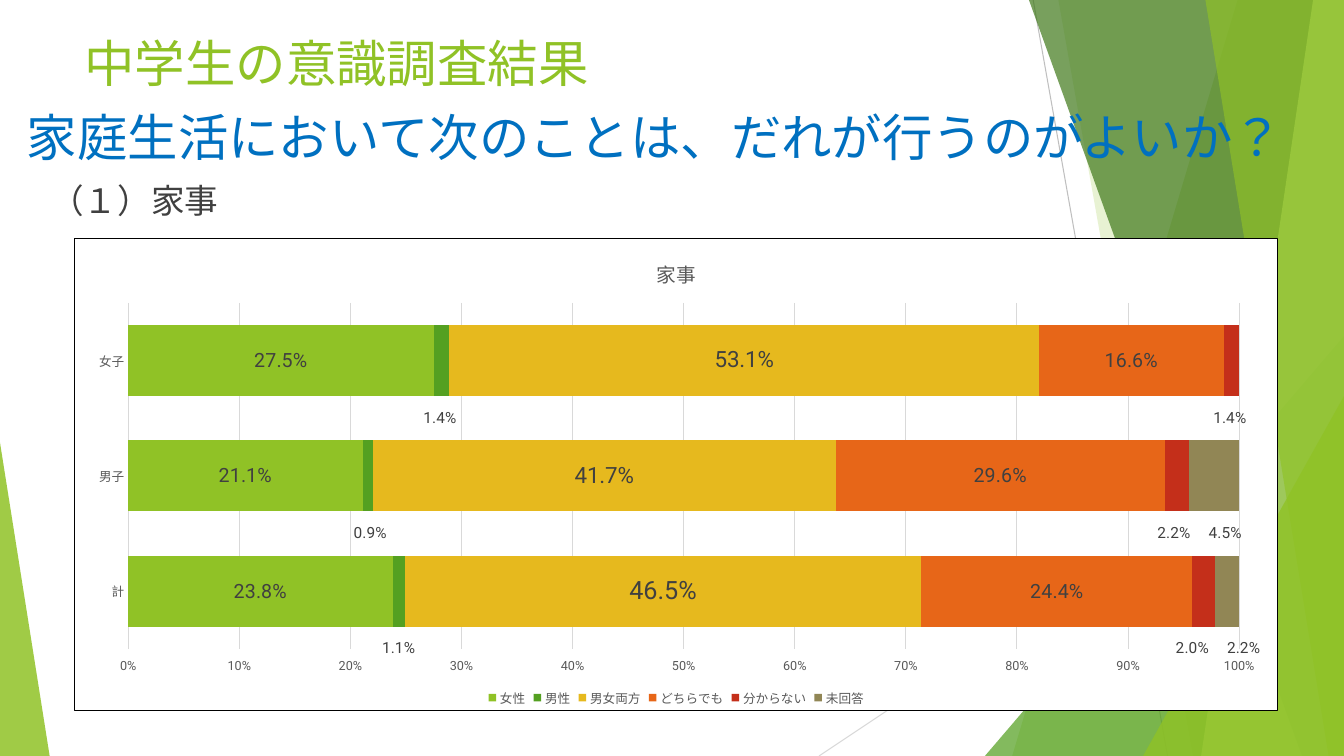
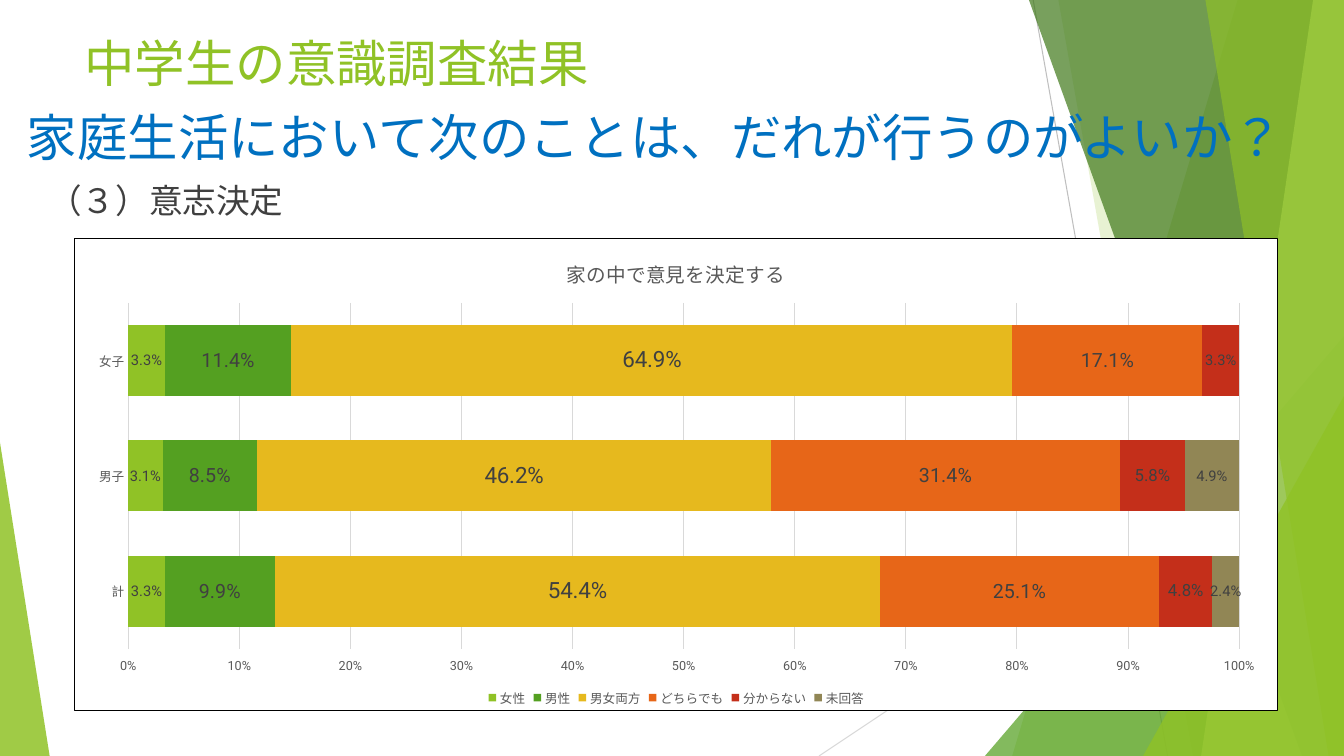
"""Build two slides of survey results on who should do what at home."""
from dataclasses import dataclass

from lxml.etree import SubElement
from pptx import Presentation
from pptx.chart.data import CategoryChartData
from pptx.dml.color import RGBColor
from pptx.enum.chart import (XL_CHART_TYPE, XL_LABEL_POSITION, XL_LEGEND_POSITION,
                             XL_TICK_LABEL_POSITION, XL_TICK_MARK)
from pptx.enum.lang import MSO_LANGUAGE_ID
from pptx.enum.shapes import MSO_CONNECTOR, MSO_SHAPE
from pptx.enum.text import MSO_ANCHOR
from pptx.oxml import parse_xml
from pptx.oxml.ns import nsdecls, qn
from pptx.util import Pt


@dataclass(frozen=True)
class Theme:
    font: str = "Roboto"
    lime: str = "90C226"
    green: str = "54A021"
    forest: str = "3F7819"
    pale: str = "C0E474"
    blue: str = "0070C0"
    ink: str = "404040"
    axis_ink: str = "595959"
    grid: str = "D9D9D9"
    grey: str = "BFBFBF"
    series: tuple = ("90C226", "54A021", "E6B91E", "E76618", "C42F1A", "918655")
    heading: int = 36
    subheading: int = 24
    chart_title: int = 14
    axis: int = 9


THEME = Theme()
WIDTH, HEIGHT = 960, 540
CHART_WIDTH, CHART_HEIGHT = 860, 338


def style(font, size, colour):
    font.name = THEME.font
    font.size = Pt(size)
    font.color.rgb = RGBColor.from_string(colour)


def set_layout(parent, position, x, y, w=None, h=None, **modes):
    layout = parent.find(qn("c:layout"))
    if layout is None:
        layout = parse_xml(f"<c:layout {nsdecls('c')}/>")
        parent.insert(position, layout)
    manual = SubElement(layout, qn("c:manualLayout"))
    for name, value in modes.items():
        SubElement(manual, qn(f"c:{name}"), val=value)
    for name, length, whole in (("x", x, CHART_WIDTH), ("y", y, CHART_HEIGHT),
                                ("w", w, CHART_WIDTH), ("h", h, CHART_HEIGHT)):
        if length is not None:
            SubElement(manual, qn(f"c:{name}"), val=str(length / whole))


deck = Presentation()
deck.slide_width, deck.slide_height = Pt(WIDTH), Pt(HEIGHT)
blank = deck.slide_layouts[6]
for placeholder in list(blank.placeholders):
    blank.shapes.element.remove(placeholder.element)
pages = [deck.slides.add_slide(blank) for _ in range(2)]

DECOR_LINES = [
    (738, 0, 834, HEIGHT, THEME.grey),
    (WIDTH, 290, 585, HEIGHT, THEME.grid),
]
DECOR_SHAPES = [
    ("band", (884, 723), THEME.lime, 30),
    ("band", (756, 852), THEME.lime, 20),
    ("peak", (703.5, WIDTH, 240, 1), THEME.green, 72),
    ("band", (735, 930), THEME.forest, 70),
    ("band", (938, 858), THEME.pale, 70),
    ("band", (861, 949), THEME.lime, 65),
    ("peak", (816.5, WIDTH, 283, 1), THEME.lime, 80),
    ("peak", (0, 35.5, 316, 0), THEME.lime, 85),
]

canvas = pages[0].shapes
for x1, y1, x2, y2, colour in DECOR_LINES:
    line = canvas.add_connector(MSO_CONNECTOR.STRAIGHT, Pt(x1), Pt(y1), Pt(x2), Pt(y2))
    line.line.color.rgb = RGBColor.from_string(colour)
    line.line.width = Pt(0.75)
    SubElement(line.element.spPr, qn("a:effectLst"))

for kind, geometry, colour, opacity in DECOR_SHAPES:
    if kind == "band":
        top_x, bottom_x = geometry
        builder = canvas.build_freeform(Pt(top_x), 0)
        builder.add_line_segments([(Pt(WIDTH), 0), (Pt(WIDTH), Pt(HEIGHT)),
                                   (Pt(bottom_x), Pt(HEIGHT))], close=True)
        shape = builder.convert_to_shape()
    else:
        left, right, top, apex = geometry
        shape = canvas.add_shape(MSO_SHAPE.ISOSCELES_TRIANGLE, Pt(left), Pt(top),
                                 Pt(right - left), Pt(HEIGHT - top))
        shape.adjustments[0] = apex
    shape.shadow.inherit = False
    shape.line.fill.background()
    shape.fill.solid()
    shape.fill.fore_color.rgb = RGBColor.from_string(colour)
    for solid in shape.element.iter(qn("a:srgbClr")):
        SubElement(solid, qn("a:alpha"), val=str(opacity * 1000))

for shape in list(canvas):
    blank.shapes.element.append(shape.element)

CATEGORIES = ["女子", "男子", "計"]
SERIES_NAMES = ["女性", "男性", "男女両方", "どちらでも", "分からない", "未回答"]
SURVEYS = [
    {
        "heading": "（１）家事", "left": 28.8,
        "title": "家事", "title_left": 413.5,
        "values": [(0.275, 0.211, 0.238), (0.014, 0.009, 0.011), (0.531, 0.417, 0.465),
                   (0.166, 0.296, 0.244), (0.014, 0.022, 0.02), (0, 0.045, 0.022)],
        "sizes": [(14, 14, 14), (11, 11, 11), (16, 16, 18),
                  (14, 14, 14), (11, 11, 11), (11, 11, 11)],
        "shifts": {1: (-1, 2, 0), 4: (-1, -2, -8), 5: (0, 8, 12)},
    },
    {
        "heading": "（３）意志決定", "left": 27.4,
        "title": "家の中で意見を決定する", "title_left": 349,
        "values": [(0.033, 0.031, 0.033), (0.114, 0.085, 0.099), (0.649, 0.462, 0.544),
                   (0.171, 0.314, 0.251), (0.033, 0.058, 0.048), (0, 0.049, 0.024)],
        "sizes": [(10.5, 10.5, 10.5), (14, 14, 14), (16, 16, 16),
                  (14, 14, 14), (10.5, 12, 12), (10.5, 10.5, 10.5)],
        "shifts": {},
    },
]

for page, survey in zip(pages, SURVEYS):
    texts = [
        ("中学生の意識調査結果", 53.3, 18, 419, 52.6, THEME.heading, THEME.lime),
        ("家庭生活において次のことは、だれが行うのがよいか？",
         12.2, 70.6, 921, 54, THEME.heading, THEME.blue),
        (survey["heading"], survey["left"], 124.6, 208, 36.7, THEME.subheading, THEME.ink),
    ]
    for text, left, top, width, height, size, colour in texts:
        box = page.shapes.add_textbox(Pt(left), Pt(top), Pt(width), Pt(height))
        box.text_frame.word_wrap = True
        box.text_frame.vertical_anchor = MSO_ANCHOR.MIDDLE
        paragraph = box.text_frame.paragraphs[0]
        span = paragraph.add_run()
        span.text = text
        span.font.language_id = MSO_LANGUAGE_ID.JAPANESE
        style(paragraph.font, size, colour)

    data = CategoryChartData(number_format="0.0%")
    data.categories = CATEGORIES
    for name, values in zip(SERIES_NAMES, survey["values"]):
        data.add_series(name, values)
    chart = page.shapes.add_chart(XL_CHART_TYPE.BAR_STACKED_100, Pt(53), Pt(170),
                                  Pt(CHART_WIDTH), Pt(CHART_HEIGHT), data).chart
    style(chart.font, 10, "000000")
    chart.element.find(qn("c:chart")).addnext(parse_xml(
        f'<c:spPr {nsdecls("c", "a")}><a:solidFill><a:srgbClr val="FFFFFF"/></a:solidFill>'
        '<a:ln w="9525"><a:solidFill><a:srgbClr val="000000"/></a:solidFill></a:ln></c:spPr>'))

    chart.has_title = True
    title = chart.chart_title.text_frame.paragraphs[0]
    title.text = survey["title"]
    style(title.font, THEME.chart_title, THEME.axis_ink)
    title.font.bold = False
    set_layout(chart.element.find(".//" + qn("c:title")), 1, survey["title_left"], 11,
               xMode="edge", yMode="edge")
    set_layout(chart.element.find(".//" + qn("c:plotArea")), 0, 38.2, 46.2, 794.3, 247.6,
               layoutTarget="inner", xMode="edge", yMode="edge")

    chart.has_legend = True
    chart.legend.position = XL_LEGEND_POSITION.BOTTOM
    chart.legend.include_in_layout = False
    style(chart.legend.font, THEME.axis, THEME.axis_ink)

    for axis in (chart.category_axis, chart.value_axis):
        axis.major_tick_mark = axis.minor_tick_mark = XL_TICK_MARK.NONE
        style(axis.tick_labels.font, THEME.axis, THEME.axis_ink)
    chart.category_axis.reverse_order = True
    chart.value_axis.tick_label_position = XL_TICK_LABEL_POSITION.HIGH
    chart.value_axis.has_major_gridlines = True
    chart.value_axis.maximum_scale = 1
    chart.value_axis.major_unit = 0.1
    chart.value_axis.tick_labels.number_format = "0%"
    chart.value_axis.tick_labels.number_format_is_linked = False
    chart.value_axis.format.line.fill.background()
    for rule in (chart.category_axis.format.line, chart.value_axis.major_gridlines.format.line):
        rule.color.rgb = RGBColor.from_string(THEME.grid)
        rule.width = Pt(0.75)

    plot = chart.plots[0]
    plot.gap_width, plot.overlap, plot.vary_by_categories = 62, 100, False
    for number, series in enumerate(plot.series):
        series.format.fill.solid()
        series.format.fill.fore_color.rgb = RGBColor.from_string(THEME.series[number])
        series.data_labels.show_value = False
        series.data_labels.number_format = "0.0%"
        series.data_labels.number_format_is_linked = False
        for row, value in enumerate(survey["values"][number]):
            if not value:
                continue
            label = series.points[row].data_label
            style(label.font, survey["sizes"][number][row], THEME.ink)
            label.position = XL_LABEL_POSITION.CENTER
            if number in survey["shifts"]:
                node = chart.element.xpath(
                    f".//c:ser[c:idx/@val={number}]//c:dLbl[c:idx/@val={row}]")[0]
                set_layout(node, 1, survey["shifts"][number][row], 41)
    for leader in chart.element.iter(qn("c:showLeaderLines")):
        leader.set("val", "0")

deck.save("out.pptx")
